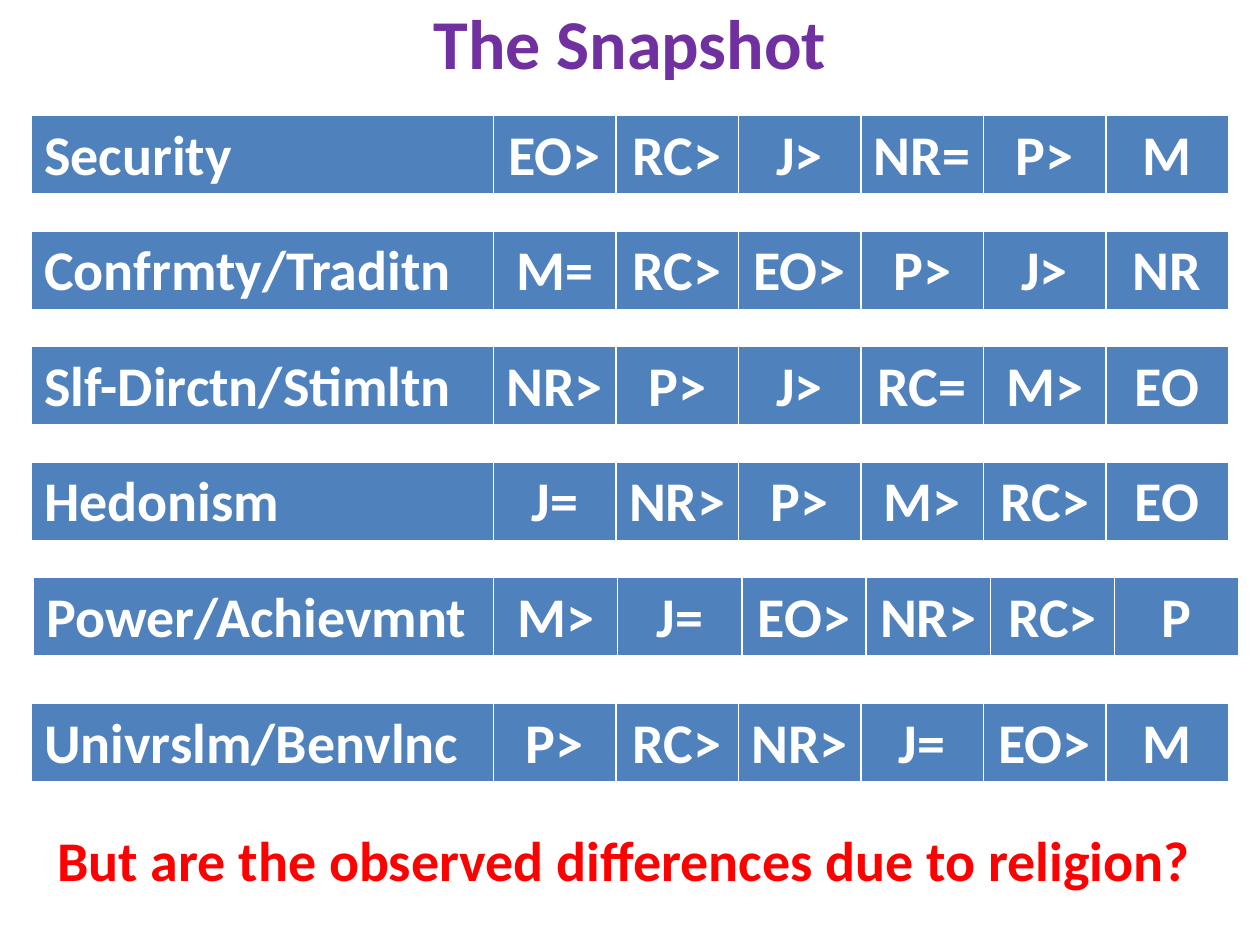
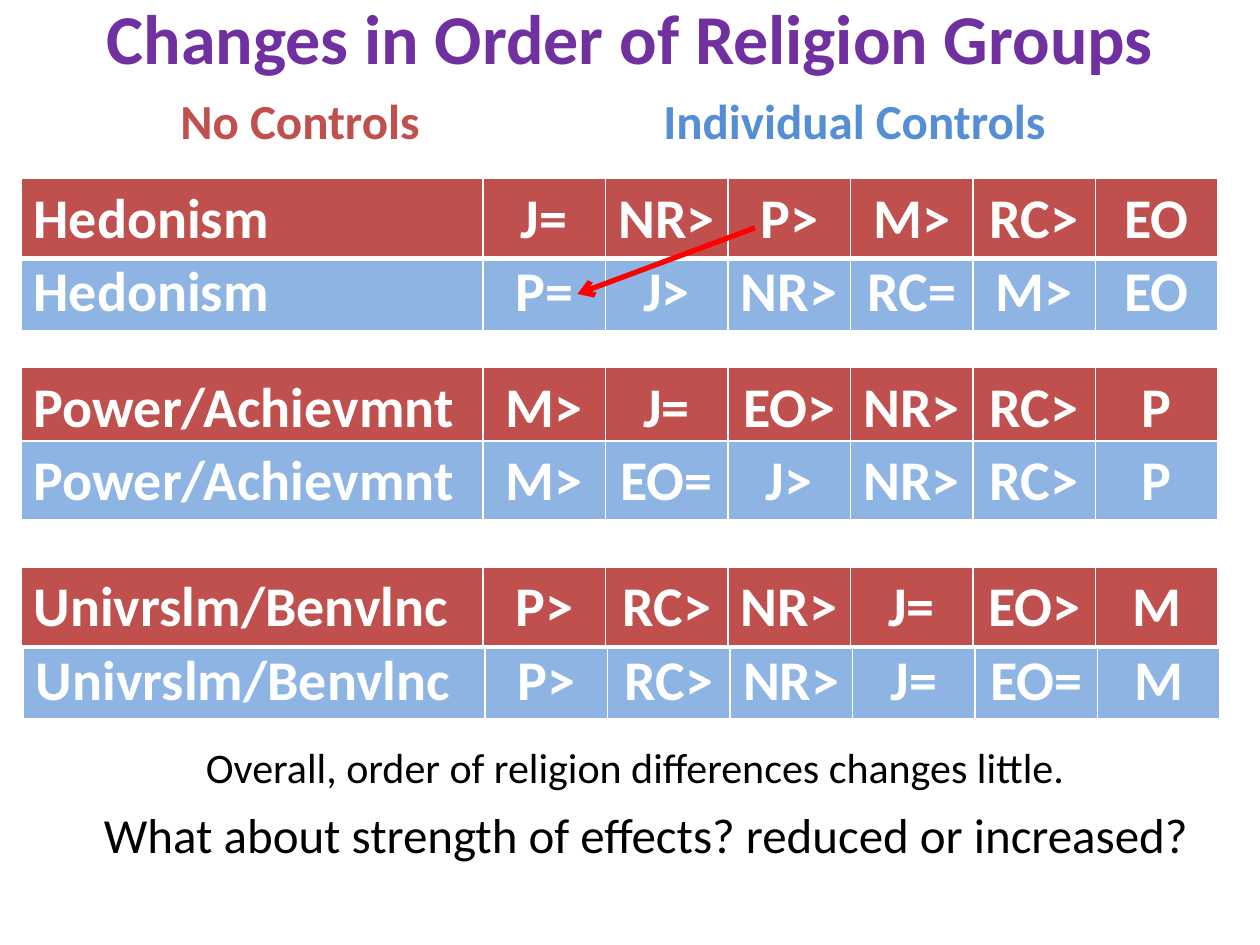
import dataclasses

import lxml.etree
import pptx
import pptx.dml.color
import pptx.enum.shapes
import pptx.enum.text
import pptx.oxml.ns
import pptx.util

Align = pptx.enum.text.PP_ALIGN
Anchor = pptx.enum.text.MSO_ANCHOR


@dataclasses.dataclass(frozen=True)
class Theme:
    font: str = "Calibri"
    purple: str = "7030A0"
    red: str = "FF0000"
    black: str = "000000"
    white: str = "FFFFFF"
    snapshot: str = "4F81BD"
    no_controls: str = "C0504D"
    controls: str = "8EB4E3"
    controls_heading: str = "558ED5"
    title_size: int = 40
    large_size: int = 32
    medium_size: int = 28
    small_size: int = 24
    border_width: int = 1
    heavy_width: int = 3


class Deck:
    COLUMNS = 120
    BAND_HEIGHT = 7.5
    BAND_WIDTH = 114
    LABEL_WIDTH = 44

    def __init__(self, theme):
        self.theme = theme
        self.presentation = pptx.Presentation()
        self.presentation.slide_width = pptx.util.Inches(10)
        self.presentation.slide_height = pptx.util.Inches(7.5)
        self.unit = self.presentation.slide_width / self.COLUMNS
        self.slide = None

    def grid(self, *lengths):
        return [round(length * self.unit) for length in lengths]

    def add_slide(self):
        self.slide = self.presentation.slides.add_slide(self.presentation.slide_layouts[6])

    def set_text(self, text_frame, text, size, color, bold, align):
        text_frame.text = text
        paragraph = text_frame.paragraphs[0]
        paragraph.alignment = align
        font = paragraph.runs[0].font
        font.name = self.theme.font
        font.size = pptx.util.Pt(size)
        font.bold = bold
        font.color.rgb = pptx.dml.color.RGBColor.from_string(color)

    def text(self, text, box, size, color, bold=False, align=Align.LEFT, anchor=Anchor.TOP):
        shape = self.slide.shapes.add_textbox(*self.grid(*box))
        shape.text_frame.word_wrap = True
        shape.text_frame.vertical_anchor = anchor
        self.set_text(shape.text_frame, text, size, color, bold, align)

    def title(self, text, box):
        self.text(text, box, self.theme.title_size, self.theme.purple, True,
                  Align.CENTER, Anchor.MIDDLE)

    def border(self, cell, side, width):
        line = lxml.etree.SubElement(cell._tc.get_or_add_tcPr(), pptx.oxml.ns.qn(f"a:ln{side}"),
                                     w=str(pptx.util.Pt(width)))
        fill = lxml.etree.SubElement(line, pptx.oxml.ns.qn("a:solidFill"))
        lxml.etree.SubElement(fill, pptx.oxml.ns.qn("a:srgbClr"), val=self.theme.white)

    def ranking(self, value, order, left, top, color,
                width=BAND_WIDTH, label_width=LABEL_WIDTH):
        texts = [value, *order.split()]
        frame = self.slide.shapes.add_table(
            1, len(texts), *self.grid(left, top, width, self.BAND_HEIGHT))
        group_width = (width - label_width) / (len(texts) - 1)
        for index, text in enumerate(texts):
            column_width = group_width if index else label_width
            frame.table.columns[index].width = self.grid(column_width)[0]
            cell = frame.table.cell(0, index)
            for side in "LRTB":
                heavy = side == "B"
                self.border(cell, side,
                            self.theme.heavy_width if heavy else self.theme.border_width)
            cell.fill.solid()
            cell.fill.fore_color.rgb = pptx.dml.color.RGBColor.from_string(color)
            self.set_text(cell.text_frame, text, self.theme.large_size, self.theme.white, True,
                          Align.CENTER if index else Align.LEFT)

    def arrow(self, start, end):
        connector = self.slide.shapes.add_connector(
            pptx.enum.shapes.MSO_CONNECTOR.STRAIGHT, *self.grid(*start, *end))
        connector.line.color.rgb = pptx.dml.color.RGBColor.from_string(self.theme.red)
        connector.line.width = pptx.util.Pt(self.theme.heavy_width)
        lxml.etree.SubElement(connector.line._get_or_add_ln(), pptx.oxml.ns.qn("a:tailEnd"),
                              type="arrow")
        lxml.etree.SubElement(connector._element.spPr, pptx.oxml.ns.qn("a:effectLst"))


def build_snapshot(deck):
    theme = deck.theme
    deck.add_slide()
    deck.title("The Snapshot", (6, -2, 108, 12))
    rankings = [
        ("Security", "EO> RC> J> NR= P> M"),
        ("Confrmty/Traditn", "M= RC> EO> P> J> NR"),
        ("Slf-Dirctn/Stimltn", "NR> P> J> RC= M> EO"),
        ("Hedonism", "J= NR> P> M> RC> EO"),
    ]
    for index, (value, order) in enumerate(rankings):
        deck.ranking(value, order, 3, 11 * (index + 1), theme.snapshot)
    deck.ranking("Power/Achievmnt", "M> J= EO> NR> RC> P", 3.2, 55, theme.snapshot,
                 width=114.8, label_width=43.8)
    deck.ranking("Univrslm/Benvlnc", "P> RC> NR> J= EO> M", 3, 67, theme.snapshot)
    deck.text("But are the observed differences due to religion?", (4.3, 78, 115, 7.7),
              theme.large_size, theme.red, True)


def build_changes(deck):
    theme = deck.theme
    deck.add_slide()
    deck.title("Changes in Order of Religion Groups", (0, -4, 120, 15))
    rankings = [
        ("Hedonism", "P= J> NR> RC= M> EO", 2, 24, theme.controls),
        ("Hedonism", "J= NR> P> M> RC> EO", 2, 17, theme.no_controls),
        ("Univrslm/Benvlnc", "P> RC> NR> J= EO= M", 2.2, 61, theme.controls),
        ("Univrslm/Benvlnc", "P> RC> NR> J= EO> M", 2, 54, theme.no_controls),
        ("Power/Achievmnt", "M> J= EO> NR> RC> P", 2, 35, theme.no_controls),
        ("Power/Achievmnt", "M> EO= J> NR> RC> P", 2, 42, theme.controls),
    ]
    for ranking in rankings:
        deck.ranking(*ranking)
    deck.text("No Controls", (16, 8, 28, 6.8), theme.medium_size, theme.no_controls, True)
    deck.text("Individual Controls", (62, 8, 42, 6.8), theme.medium_size,
              theme.controls_heading, True)
    deck.text("Overall, order of religion differences changes little.", (11, 70, 99, 6),
              theme.small_size, theme.black, align=Align.CENTER)
    deck.text("What about strength of effects? reduced or increased?", (7, 76, 109, 10.5),
              theme.medium_size, theme.black, align=Align.CENTER)
    deck.arrow((71.9, 21.7), (55, 28))


def main():
    deck = Deck(Theme())
    build_snapshot(deck)
    build_changes(deck)
    deck.presentation.save("out.pptx")


if __name__ == "__main__":
    main()
